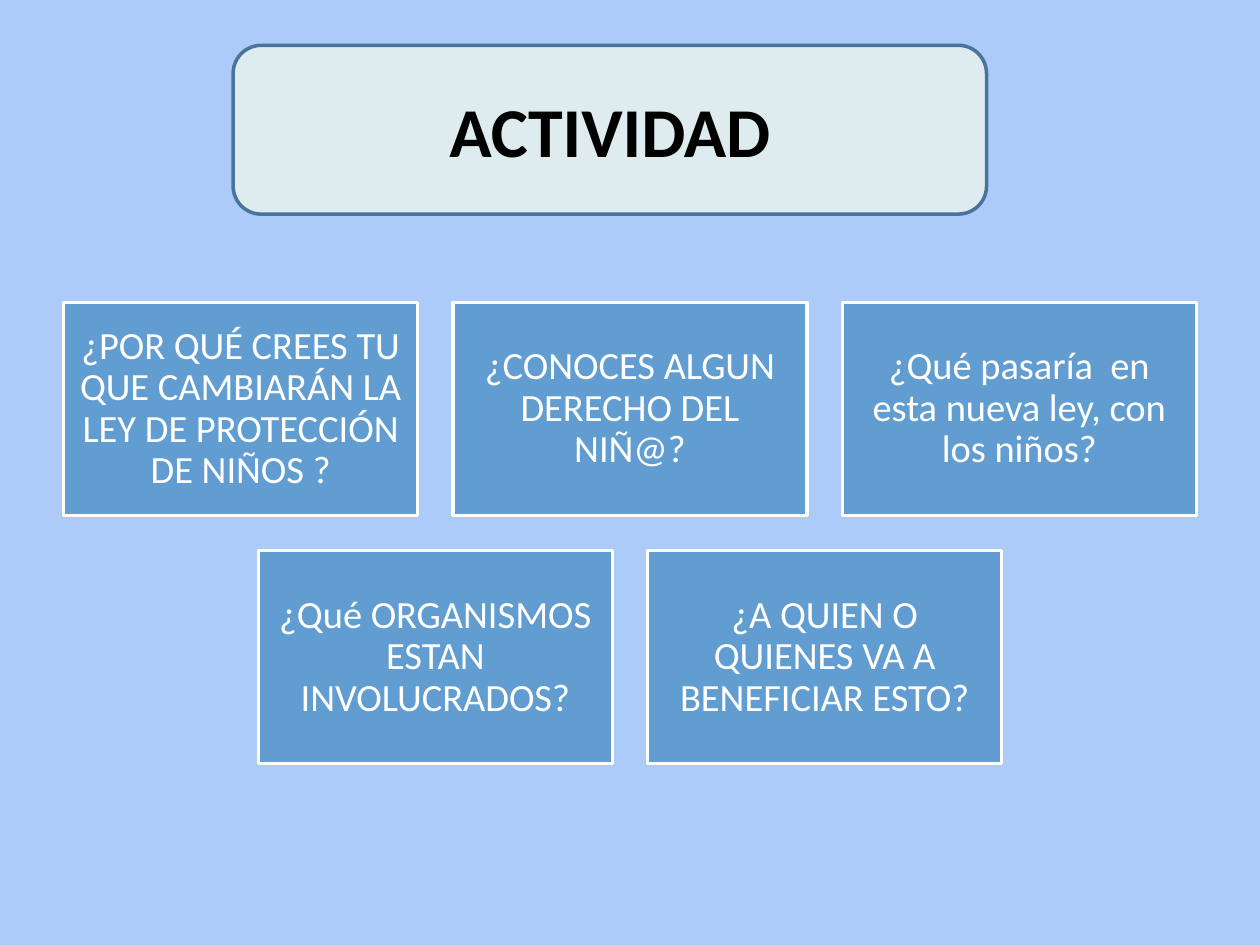
from pptx import Presentation
from pptx.dml.color import RGBColor
from pptx.enum.shapes import MSO_SHAPE as Shape
from pptx.enum.text import MSO_ANCHOR as Anchor, PP_ALIGN as Align
from pptx.util import Inches, Pt

SKY = RGBColor(0xAC, 0xCB, 0xF9)
BLUE = RGBColor(0x62, 0x9D, 0xD1)
NAVY = RGBColor(0x49, 0x74, 0x9B)
PALE = RGBColor(0xDE, 0xEC, 0xEF)
WHITE = RGBColor(0xFF, 0xFF, 0xFF)
BLACK = RGBColor(0x00, 0x00, 0x00)

SLIDE_WIDTH, SLIDE_HEIGHT = 10, 7.5
CARD_WIDTH, CARD_HEIGHT, GAP = 2.81, 1.69, 0.28
CARDS_TOP = 2.4
QUESTION_ROWS = [
    [
        "¿POR QUÉ CREES TU QUE CAMBIARÁN LA LEY DE PROTECCIÓN DE NIÑOS ?",
        "¿CONOCES ALGUN DERECHO DEL NIÑ@?",
        "¿Qué pasaría  en esta nueva ley, con los niños?",
    ],
    [
        "¿Qué ORGANISMOS ESTAN INVOLUCRADOS?",
        "¿A QUIEN O QUIENES VA A BENEFICIAR ESTO?",
    ],
]

deck = Presentation()
deck.slide_width, deck.slide_height = Inches(SLIDE_WIDTH), Inches(SLIDE_HEIGHT)
page = deck.slides.add_slide(deck.slide_layouts[6])
page.background.fill.solid()
page.background.fill.fore_color.rgb = SKY


def add_box(kind, left, top, width, height, text, fill, line, color, size):
    box = page.shapes.add_shape(
        kind, Inches(left), Inches(top), Inches(width), Inches(height))
    box.shadow.inherit = False
    box.fill.solid()
    box.fill.fore_color.rgb = fill
    box.line.color.rgb = line
    box.line.width = Pt(2)
    frame = box.text_frame
    frame.word_wrap = True
    frame.vertical_anchor = Anchor.MIDDLE
    frame.text = text
    para = frame.paragraphs[0]
    para.alignment = Align.CENTER
    font = para.runs[0].font
    font.name, font.size, font.color.rgb = "Calibri", Pt(size), color
    return box


for row, questions in enumerate(QUESTION_ROWS):
    row_width = len(questions) * (CARD_WIDTH + GAP) - GAP
    row_left = (SLIDE_WIDTH - row_width) / 2
    top = CARDS_TOP + row * (CARD_HEIGHT + GAP)
    for column, question in enumerate(questions):
        left = row_left + column * (CARD_WIDTH + GAP)
        card = add_box(Shape.RECTANGLE, left, top, CARD_WIDTH, CARD_HEIGHT,
                       question, BLUE, WHITE, WHITE, 22)
        frame = card.text_frame
        frame.margin_left = frame.margin_right = Inches(0.09)
        frame.margin_top = frame.margin_bottom = Inches(0.09)
        frame.paragraphs[0].line_spacing = 0.9

title = add_box(Shape.ROUNDED_RECTANGLE, 1.85, 0.36, 5.98, 1.34,
                "ACTIVIDAD", PALE, NAVY, BLACK, 40)
title.text_frame.paragraphs[0].runs[0].font.bold = True

deck.save("out.pptx")
